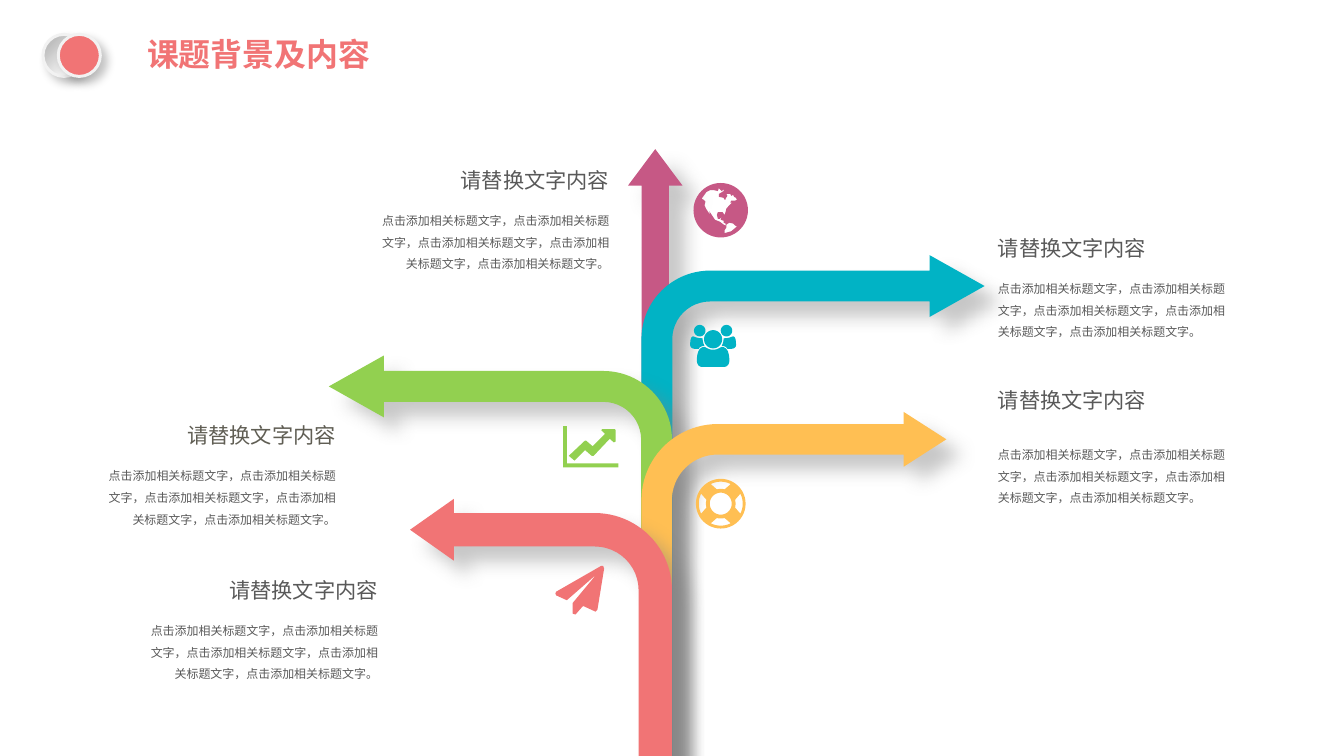
from math import cos, radians, sin

from pptx import Presentation
from pptx.dml.color import RGBColor
from pptx.enum.lang import MSO_LANGUAGE_ID as Language
from pptx.enum.shapes import MSO_SHAPE as Preset
from pptx.enum.text import MSO_AUTO_SIZE as AutoSize, PP_ALIGN as Align
from pptx.oxml import parse_xml
from pptx.oxml.ns import nsdecls
from pptx.oxml.xmlchemy import OxmlElement
from pptx.util import Inches, Pt

FONT = "Roboto Condensed"
CORAL, YELLOW, GREEN, TEAL, PLUM = "F17475", "FFBF53", "92D050", "01B3C5", "C65885"
GREY, WARM_GREY = "595959", "605E54"
HEADING = "请替换文字内容"
BODY = ("点击添加相关标题文字，点击添加相关标题文字，点击添加相关标题文字，"
        "点击添加相关标题文字，点击添加相关标题文字。")

# preset, left, top, width, height, flipped, adjustments, colour
ARROWS = [
    (Preset.UP_ARROW, 6.57, 1.56, 0.57, 6.35, False, (0.5, 0.67), PLUM),
    (Preset.BENT_ARROW, 6.71, 2.67, 3.59, 5.24, False, (0.09, 0.09, 0.16, 0.2), TEAL),
    (Preset.BENT_ARROW, 3.44, 3.72, 3.59, 4.19, True, (0.09, 0.09, 0.16, 0.2), GREEN),
    (Preset.BENT_ARROW, 6.71, 4.31, 3.19, 3.6, False, (0.1, 0.09, 0.14, 0.25), YELLOW),
    (Preset.BENT_ARROW, 4.29, 5.22, 2.74, 2.69, True, (0.13, 0.12, 0.17, 0.3), CORAL),
]

# left, top, width, height, alignment, heading colour, gap under heading
CAPTIONS = [
    (1.4, 5.99, 2.65, 1.2, Align.RIGHT, GREY, 10.5),
    (1, 4.37, 2.61, 1.35, Align.RIGHT, WARM_GREY, 10.5),
    (10.34, 4, 2.61, 1.51, Align.LEFT, GREY, 21),
    (3.86, 1.7, 2.61, 1.35, Align.RIGHT, GREY, 10.5),
    (10.34, 2.41, 2.61, 1.35, Align.LEFT, GREY, 10.5),
]

PLANE = [(6.32, 5.95), (6.25, 6.38), (6.23, 6.4), (6.1, 6.34), (6.02, 6.43), (5.99, 6.42),
         (5.99, 6.31), (6.24, 6.01), (5.93, 6.28), (5.82, 6.23), (5.81, 6.21), (5.82, 6.19),
         (6.29, 5.92), (6.31, 5.92)]
CHART_AXES = [(6.47, 4.89), (5.89, 4.89), (5.89, 4.46), (5.93, 4.46), (5.93, 4.85), (6.47, 4.85)]
CHART_TREND = [(6.44, 4.62), (6.42, 4.63), (6.38, 4.59), (6.21, 4.77), (6.19, 4.77), (6.12, 4.71),
               (6.01, 4.82), (5.95, 4.77), (6.12, 4.61), (6.13, 4.61), (6.2, 4.67), (6.33, 4.54),
               (6.29, 4.5), (6.3, 4.49), (6.43, 4.49), (6.44, 4.5)]
AMERICAS = [(7.64, 2.12), (7.65, 2.1), (7.69, 2.1), (7.71, 2.09), (7.7, 2.07), (7.68, 2.06),
            (7.67, 2.04), (7.65, 2.05), (7.64, 2.03), (7.6, 2.03), (7.61, 2.05), (7.59, 2.08),
            (7.59, 2.09), (7.58, 2.09), (7.57, 2.07), (7.52, 2.06), (7.52, 2.03), (7.57, 2),
            (7.57, 1.98), (7.55, 2), (7.52, 1.97), (7.51, 2), (7.47, 1.99), (7.43, 1.99),
            (7.39, 2.01), (7.34, 2.08), (7.36, 2.09), (7.38, 2.11), (7.37, 2.15), (7.39, 2.19),
            (7.41, 2.22), (7.43, 2.25), (7.42, 2.21), (7.46, 2.27), (7.48, 2.3), (7.53, 2.32),
            (7.57, 2.35), (7.59, 2.36), (7.59, 2.34), (7.57, 2.33), (7.57, 2.31), (7.54, 2.3),
            (7.55, 2.27), (7.53, 2.29), (7.51, 2.29), (7.5, 2.25), (7.51, 2.22), (7.56, 2.22),
            (7.58, 2.25), (7.59, 2.22), (7.6, 2.18), (7.63, 2.15), (7.66, 2.12)]
SOUTH_TIP = [(7.71, 2.37), (7.69, 2.36), (7.67, 2.34), (7.63, 2.33), (7.6, 2.35), (7.6, 2.38),
             (7.58, 2.41), (7.58, 2.44), (7.65, 2.42)]


def rgb(color):
    return RGBColor.from_string(color)


def paint(shape, color):
    shape.shadow.inherit = False
    shape.fill.solid()
    shape.fill.fore_color.rgb = rgb(color)
    shape.line.fill.background()


def add_shadow(shape, color, opacity, blur, distance):
    """Cast a shadow to the lower right; blur and distance are in points."""
    effects = shape._element.spPr.find(".//{*}effectLst")
    effects.append(parse_xml(
        f'<a:outerShdw {nsdecls("a")} blurRad="{Pt(blur)}" dist="{Pt(distance)}" dir="2700000" '
        f'algn="tl" rotWithShape="0"><a:srgbClr val="{color}">'
        f'<a:alpha val="{opacity * 1000}"/></a:srgbClr></a:outerShdw>'))


def add_badge(page, left):
    badge = page.shapes.add_shape(Preset.OVAL, Inches(left), Inches(0.36), Inches(0.44), Inches(0.44))
    paint(badge, CORAL)
    badge.line.color.rgb = rgb("F2F2F2")
    badge.line.width = Pt(2.25)
    add_shadow(badge, "000000", 23, 7, 5.9)
    return badge


def fade_to_white(shape):
    shape.fill.gradient()
    shape.fill.gradient_angle = 315
    for stop, position, color in zip(shape.fill.gradient_stops, (0.2, 0.8), ("BFBFBF", "FFFFFF")):
        stop.position = position
        stop.color.rgb = rgb(color)


def add_arrow(page, preset, left, top, width, height, flipped, adjustments, color):
    arrow = page.shapes.add_shape(preset, Inches(left), Inches(top), Inches(width), Inches(height))
    for index, value in enumerate(adjustments):
        arrow.adjustments[index] = value
    if flipped:
        arrow._element.spPr.get_or_add_xfrm().set("flipH", "1")
    paint(arrow, color)
    add_shadow(arrow, "808080", 43, 14, 16)


def add_span(para, text, size, color, bold=False):
    span = para.add_run()
    span.text = text
    font = span.font
    font.size, font.bold, font.name = Pt(size), bold, FONT
    font.color.rgb = rgb(color)
    font.language_id = Language.SIMPLIFIED_CHINESE
    east_asian = OxmlElement("a:ea")
    east_asian.set("typeface", FONT)
    span._r.get_or_add_rPr().append(east_asian)


def add_box(page, left, top, width, height):
    box = page.shapes.add_textbox(Inches(left), Inches(top), Inches(width), Inches(height))
    box.text_frame.word_wrap = True
    return box.text_frame


def add_caption(page, left, top, width, height, align, color, gap):
    frame = add_box(page, left, top, width, height)
    frame.auto_size = AutoSize.SHAPE_TO_FIT_TEXT
    heading, body = frame.paragraphs[0], frame.add_paragraph()
    heading.alignment = body.alignment = align
    heading.space_after = Pt(gap)
    body.line_spacing = 1.5
    add_span(heading, HEADING, 16, color)
    add_span(body, BODY, 9, GREY)


def add_title(page, text):
    para = add_box(page, 1.44, 0.36, 2.84, 0.55).paragraphs[0]
    para.line_spacing = 0.9
    add_span(para, text, 24, CORAL, bold=True)


def arc(x, y, radius, start=0, end=360, steps=48):
    angles = [radians(start + (end - start) * step / steps) for step in range(steps + 1)]
    return [(x + radius * cos(angle), y + radius * sin(angle)) for angle in angles]


def curve(start, *cubics, steps=8):
    """Sample a chain of cubic Bezier pieces, each given as x1, y1, x2, y2, x, y."""
    points = [start]
    for x1, y1, x2, y2, x3, y3 in cubics:
        x0, y0 = points[-1]
        for t in (step / steps for step in range(1, steps + 1)):
            a, b, c, d = (1 - t) ** 3, 3 * t * (1 - t) ** 2, 3 * t * t * (1 - t), t ** 3
            points.append((a * x0 + b * x1 + c * x2 + d * x3, a * y0 + b * y1 + c * y2 + d * y3))
    return points


def add_icon(page, color, *contours):
    """Draw closed contours as one shape; a contour inside another is a hole."""
    outlines = [[(Inches(x), Inches(y)) for x, y in contour] for contour in contours]
    builder = page.shapes.build_freeform(*outlines[0][0])
    for index, outline in enumerate(outlines):
        if index:
            builder.move_to(*outline[0])
        builder.add_line_segments(outline[1:], close=True)
    paint(builder.convert_to_shape(), color)


def lifebuoy(x, y):
    gaps = [arc(x, y, 0.23, middle - 27, middle + 27) + arc(x, y, 0.155, middle + 15, middle - 15)
            for middle in range(0, 360, 90)]
    return [arc(x, y, 0.26), arc(x, y, 0.115), *gaps]


def people(axis):
    def mirror(points):
        return [(2 * axis - x, y) for x, y in points]

    side_head = arc(7.32, 3.46, 0.06)
    side_body = curve((7.27, 3.65), (7.25, 3.65, 7.22, 3.64, 7.22, 3.61),
                      (7.22, 3.59, 7.22, 3.52, 7.25, 3.52), (7.26, 3.52, 7.29, 3.54, 7.35, 3.54),
                      (7.35, 3.57, 7.36, 3.6, 7.37, 3.62), (7.34, 3.62, 7.32, 3.63, 7.31, 3.65))
    half_body = curve((7.35, 3.84), (7.31, 3.84, 7.29, 3.81, 7.29, 3.77),
                      (7.29, 3.72, 7.3, 3.63, 7.37, 3.63), (7.38, 3.63, 7.41, 3.66, axis, 3.66))
    return [side_head, mirror(side_head), side_body, mirror(side_body),
            arc(axis, 3.55, 0.095), half_body + mirror(half_body)[::-1]]


def main():
    deck = Presentation()
    deck.slide_width, deck.slide_height = Inches(14.06), Inches(7.91)
    page = deck.slides.add_slide(deck.slide_layouts[6])
    fade_to_white(add_badge(page, 0.45))
    add_badge(page, 0.61)
    for arrow in ARROWS:
        add_arrow(page, *arrow)
    for caption in CAPTIONS:
        add_caption(page, *caption)
    add_icon(page, CORAL, PLANE)
    add_icon(page, PLUM, arc(7.54, 2.2, 0.285), AMERICAS, SOUTH_TIP)
    add_icon(page, GREEN, CHART_AXES, CHART_TREND)
    add_icon(page, YELLOW, *lifebuoy(7.54, 5.27))
    add_icon(page, TEAL, *people(7.46))
    add_title(page, "课题背景及内容")
    deck.save("out.pptx")


if __name__ == "__main__":
    main()
